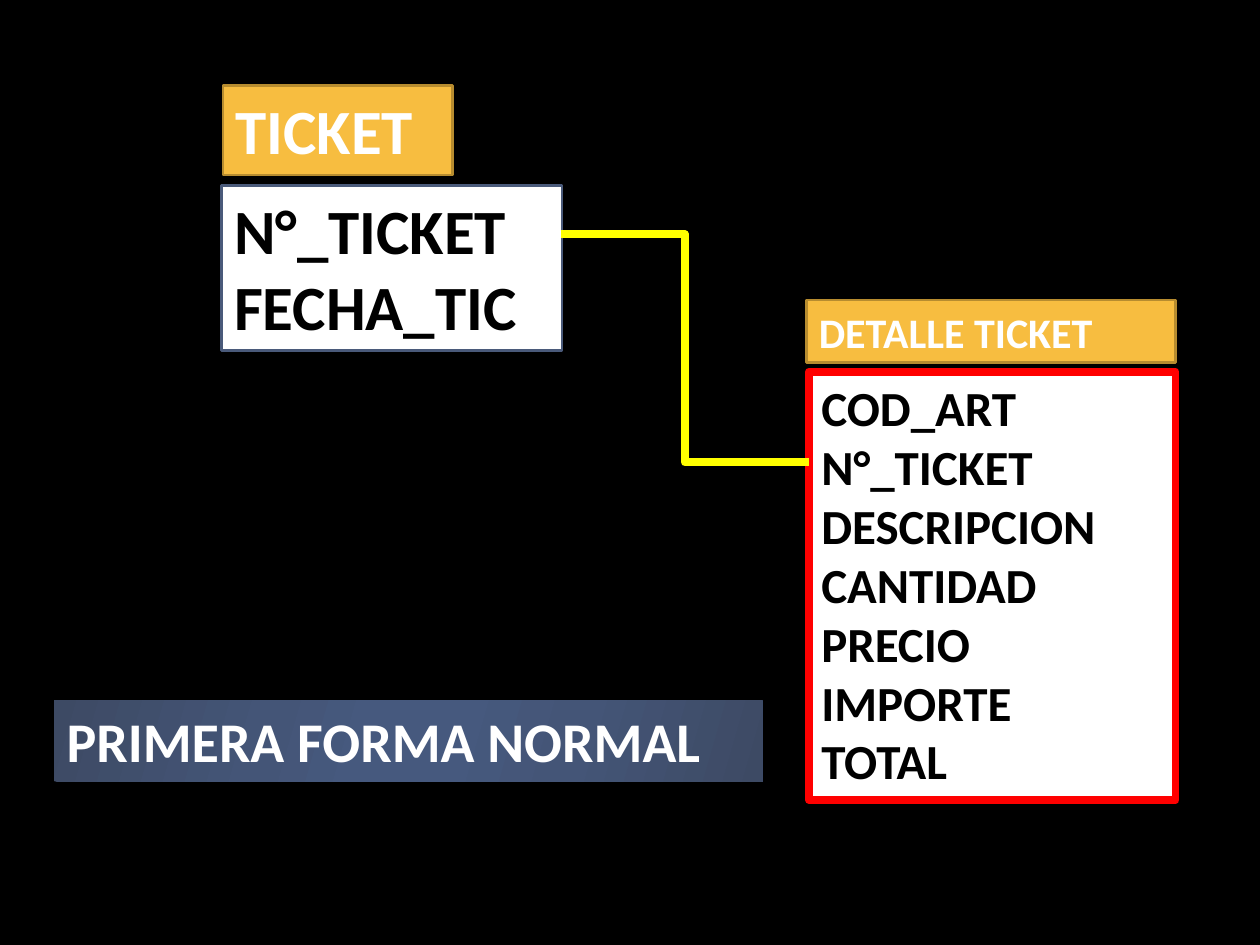
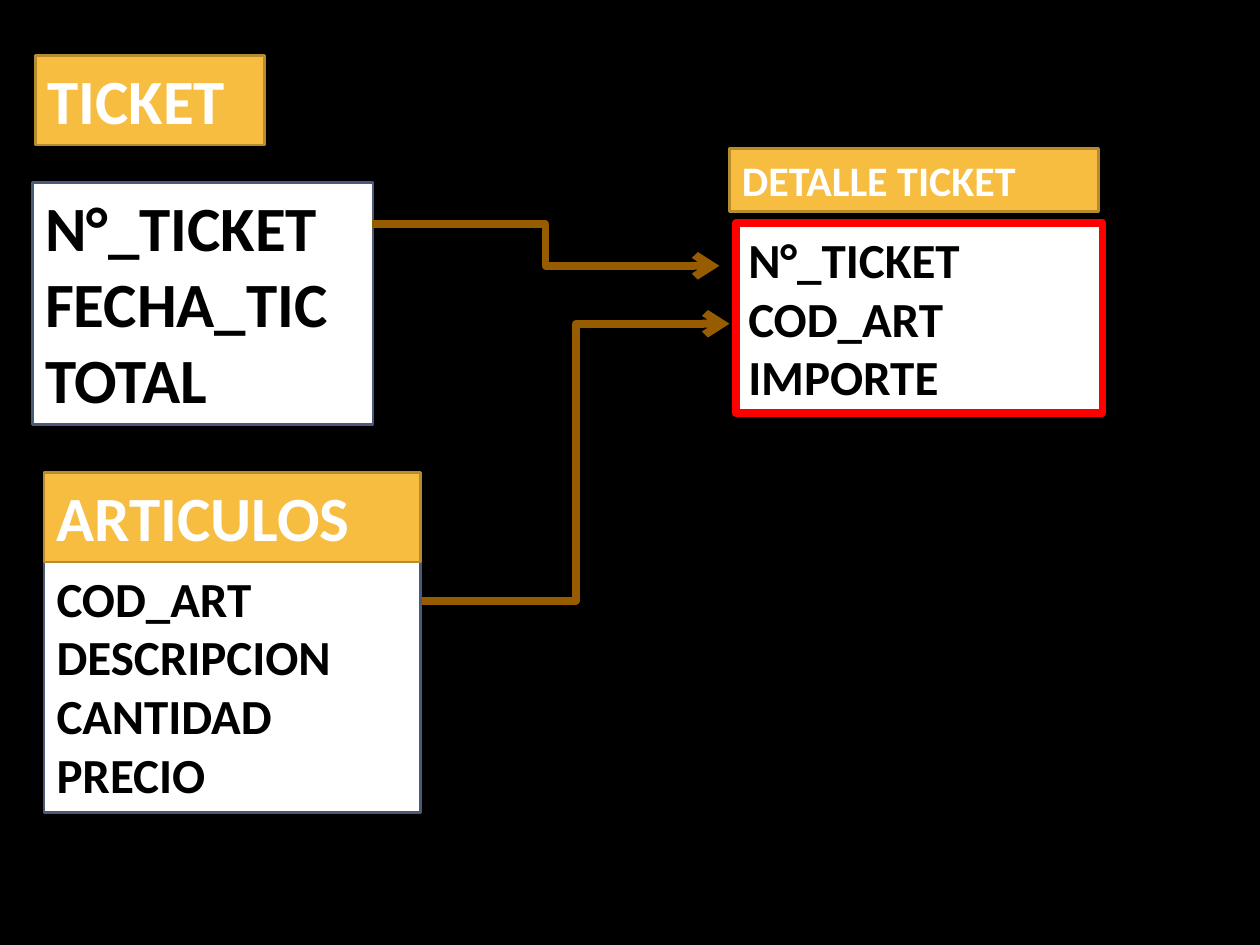
"""Builds two slides that show the normalisation of a ticket table."""
from lxml.etree import SubElement
from pptx import Presentation
from pptx.dml.color import RGBColor
from pptx.enum.shapes import MSO_CONNECTOR, MSO_SHAPE
from pptx.enum.text import MSO_ANCHOR, PP_ALIGN
from pptx.oxml.ns import qn
from pptx.util import Inches, Pt

FONT = "Calibri"
BLACK, WHITE = "000000", "FFFFFF"
GOLD, GOLD_EDGE = "F7BD40", "B78C2F"
SLATE, RED, YELLOW, BROWN = "4A5A7A", "FF0000", "FFFF00", "975C00"
BANNER_STOPS = [(0, "3D4A64"), (30, "445577"), (45, "46597E"),
                (55, "46597E"), (73, "445577"), (100, "3D4A64")]
BANNER_ANGLE = 16
THIN, THICK = 1.5, 4.5

SLIDES = [
    {
        "tables": [
            {"name": "TICKET", "name_box": (1.77, 0.68, 1.82, 0.71), "name_size": 36,
             "fields": ["N°_TICKET", "FECHA_TIC"],
             "field_box": (1.76, 1.47, 2.7, 1.31), "field_size": 36, "edge": (SLATE, THIN)},
            {"name": "DETALLE TICKET", "name_box": (6.4, 2.38, 2.93, 0.5), "name_size": 24,
             "fields": ["COD_ART", "N°_TICKET", "DESCRIPCION", "CANTIDAD",
                        "PRECIO", "IMPORTE", "TOTAL"],
             "field_box": (6.42, 2.95, 2.91, 3.4), "field_size": 28, "edge": (RED, THICK)},
        ],
        "links": [((4.45, 1.86), (6.42, 3.67), YELLOW, False)],
        "banner": ("PRIMERA FORMA NORMAL", (0.43, 5.56, 5.62, 0.64), 32),
    },
    {
        "tables": [
            {"name": "TICKET", "name_box": (0.28, 0.44, 1.82, 0.71), "name_size": 36,
             "fields": ["N°_TICKET", "FECHA_TIC", "TOTAL"],
             "field_box": (0.26, 1.45, 2.7, 1.92), "field_size": 36, "edge": (SLATE, THIN)},
            {"name": "DETALLE TICKET", "name_box": (5.79, 1.18, 2.93, 0.5), "name_size": 24,
             "fields": ["N°_TICKET", "COD_ART", "IMPORTE"],
             "field_box": (5.84, 1.77, 2.91, 1.51), "field_size": 28, "edge": (RED, THICK)},
            {"name": "ARTICULOS", "name_box": (0.35, 3.75, 2.99, 0.71), "name_size": 36,
             "fields": ["COD_ART", "DESCRIPCION", "CANTIDAD", "PRECIO"],
             "field_box": (0.35, 4.46, 2.99, 1.99), "field_size": 28, "edge": (SLATE, THIN)},
        ],
        "links": [((2.95, 1.78), (5.71, 2.11), BROWN, True),
                  ((3.35, 4.77), (5.79, 2.57), BROWN, True)],
    },
]


def color(value):
    return RGBColor.from_string(value)


def paint(fill, value):
    fill.solid()
    fill.fore_color.rgb = color(value)


def draw_line(line, value, width):
    paint(line.fill, value)
    line.width = Pt(width)


def add_box(slide, box, lines, size, text_color):
    shape = slide.shapes.add_shape(MSO_SHAPE.RECTANGLE, *map(Inches, box))
    shape.shadow.inherit = False
    frame = shape.text_frame
    frame.word_wrap = True
    frame.vertical_anchor = MSO_ANCHOR.TOP
    frame.text = "\n".join(lines)
    for paragraph in frame.paragraphs:
        paragraph.alignment = PP_ALIGN.LEFT
        font = paragraph.runs[0].font
        font.name, font.size, font.bold = FONT, Pt(size), True
        font.color.rgb = color(text_color)
    return shape


def add_entity(slide, table):
    fields = add_box(slide, table["field_box"], table["fields"], table["field_size"], BLACK)
    paint(fields.fill, WHITE)
    draw_line(fields.line, *table["edge"])
    name = add_box(slide, table["name_box"], [table["name"]], table["name_size"], WHITE)
    paint(name.fill, GOLD)
    draw_line(name.line, GOLD_EDGE, THIN)


def add_link(slide, start, end, line_color, arrow):
    connector = slide.shapes.add_connector(MSO_CONNECTOR.ELBOW, *map(Inches, start + end))
    draw_line(connector.line, line_color, THICK)
    properties = connector._element.spPr
    if arrow:
        SubElement(properties.find(qn("a:ln")), qn("a:tailEnd"), type="arrow")
    SubElement(properties, qn("a:effectLst"))


def add_banner(slide, text, box, size):
    banner = add_box(slide, box, [text], size, WHITE)
    banner.line.fill.background()
    banner.fill.gradient()
    gradient = banner._element.spPr.find(qn("a:gradFill"))
    stops = gradient.find(qn("a:gsLst"))
    for stop in list(stops):
        stops.remove(stop)
    for position, value in BANNER_STOPS:
        stop = SubElement(stops, qn("a:gs"), pos=str(position * 1000))
        SubElement(stop, qn("a:srgbClr"), val=value)
    gradient.find(qn("a:lin")).set("ang", str(BANNER_ANGLE * 60000))


def main():
    presentation = Presentation()
    presentation.slide_width, presentation.slide_height = Inches(10), Inches(7.5)
    for content in SLIDES:
        slide = presentation.slides.add_slide(presentation.slide_layouts[6])
        paint(slide.background.fill, BLACK)
        for table in content["tables"]:
            add_entity(slide, table)
        for link in content["links"]:
            add_link(slide, *link)
        if "banner" in content:
            add_banner(slide, *content["banner"])
    presentation.save("out.pptx")


if __name__ == "__main__":
    main()
